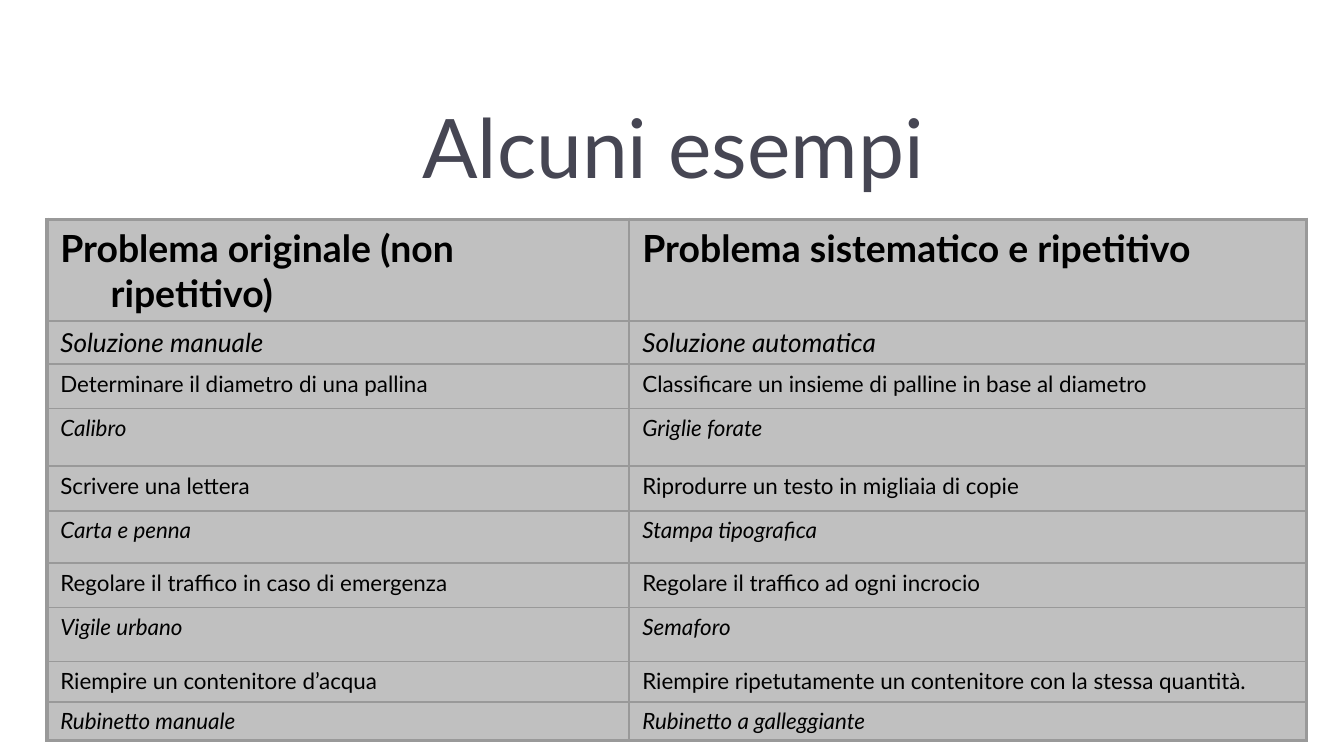
from lxml import etree
from pptx import Presentation
from pptx.dml.color import RGBColor
from pptx.enum.text import MSO_ANCHOR, PP_ALIGN
from pptx.oxml.ns import qn
from pptx.util import Cm, Pt

MIDDLE = MSO_ANCHOR.MIDDLE
CENTER = PP_ALIGN.CENTER
FONT = "Lato"
BORDER = "999999"


def style_font(font, size, color, bold=False, italic=False):
    font.name = FONT
    font.size = Pt(size)
    font.color.rgb = RGBColor.from_string(color)
    font.bold = bold
    font.italic = italic


def add_border(cell, position, side, width):
    line = etree.Element(qn(f"a:ln{side}"), w=str(Pt(width)))
    fill = etree.SubElement(line, qn("a:solidFill"))
    etree.SubElement(fill, qn("a:srgbClr"), val=BORDER)
    cell._tc.get_or_add_tcPr().insert(position, line)


prs = Presentation()
prs.slide_width = Cm(25.4)
prs.slide_height = Cm(14.28)
slide = prs.slides.add_slide(prs.slide_layouts[5])

# Title
title = slide.shapes.title
title.left, title.top, title.width, title.height = Cm(1.3), Cm(1.55), Cm(22.86), Cm(2.39)
title.text_frame.text = "Alcuni esempi"
title.text_frame.vertical_anchor = MIDDLE
heading = title.text_frame.paragraphs[0]
heading.alignment = CENTER
style_font(heading.font, 44, "464653")

# Problems alternate with their solutions, which are in italics
examples = [
    ("Problema originale (non ripetitivo)", "Problema sistematico e ripetitivo", 0.97),
    ("Soluzione manuale", "Soluzione automatica", 0.58),
    ("Determinare il diametro di una pallina",
     "Classificare un insieme di palline in base al diametro", 0.84),
    ("Calibro", "Griglie forate", 1.09),
    ("Scrivere una lettera", "Riprodurre un testo in migliaia di copie", 0.84),
    ("Carta e penna", "Stampa tipografica", 0.99),
    ("Regolare il traffico in caso di emergenza", "Regolare il traffico ad ogni incrocio", 0.84),
    ("Vigile urbano", "Semaforo", 1.02),
    ("Riempire un contenitore d’acqua",
     "Riempire ripetutamente un contenitore con la stessa quantità.", 0.76),
    ("Rubinetto manuale", "Rubinetto a galleggiante", 0.51),
]
heading_sizes = {0: 20, 1: 14}
last_row = len(examples) - 1

# Table of examples
table_frame = slide.shapes.add_table(
    len(examples), 2, Cm(0.89), Cm(4.14), Cm(23.8), Cm(8.89))
table = table_frame.table
table.first_row = False
table.horz_banding = False
table.columns[0].width = Cm(11)
table.columns[1].width = Cm(12.8)

for row, (manual, automatic, height) in enumerate(examples):
    table.rows[row].height = Cm(height)
    for column, wording in enumerate((manual, automatic)):
        cell = table.cell(row, column)
        cell.text = wording
        cell.margin_left = cell.margin_right = Cm(0.25)
        cell.margin_top = cell.margin_bottom = Cm(0.11)
        cell.fill.solid()
        cell.fill.fore_color.rgb = RGBColor.from_string("C0C0C0")

        # Hanging indent
        paragraph = cell.text_frame.paragraphs[0]
        properties = paragraph._p.get_or_add_pPr()
        properties.set("marL", str(Cm(0.95)))
        properties.set("indent", str(Cm(-0.95)))
        style_font(paragraph.font, heading_sizes.get(row, 12), "000000",
                   bold=row == 0, italic=row % 2 == 1)

        # Outer edges are thicker than inner ones
        outer_edges = [("L", column == 0), ("R", column == 1),
                       ("T", row == 0), ("B", row == last_row)]
        for position, (side, outer) in enumerate(outer_edges):
            add_border(cell, position, side, 2 if outer else 1)

table_frame.height = Cm(8.89)

prs.save("out.pptx")
